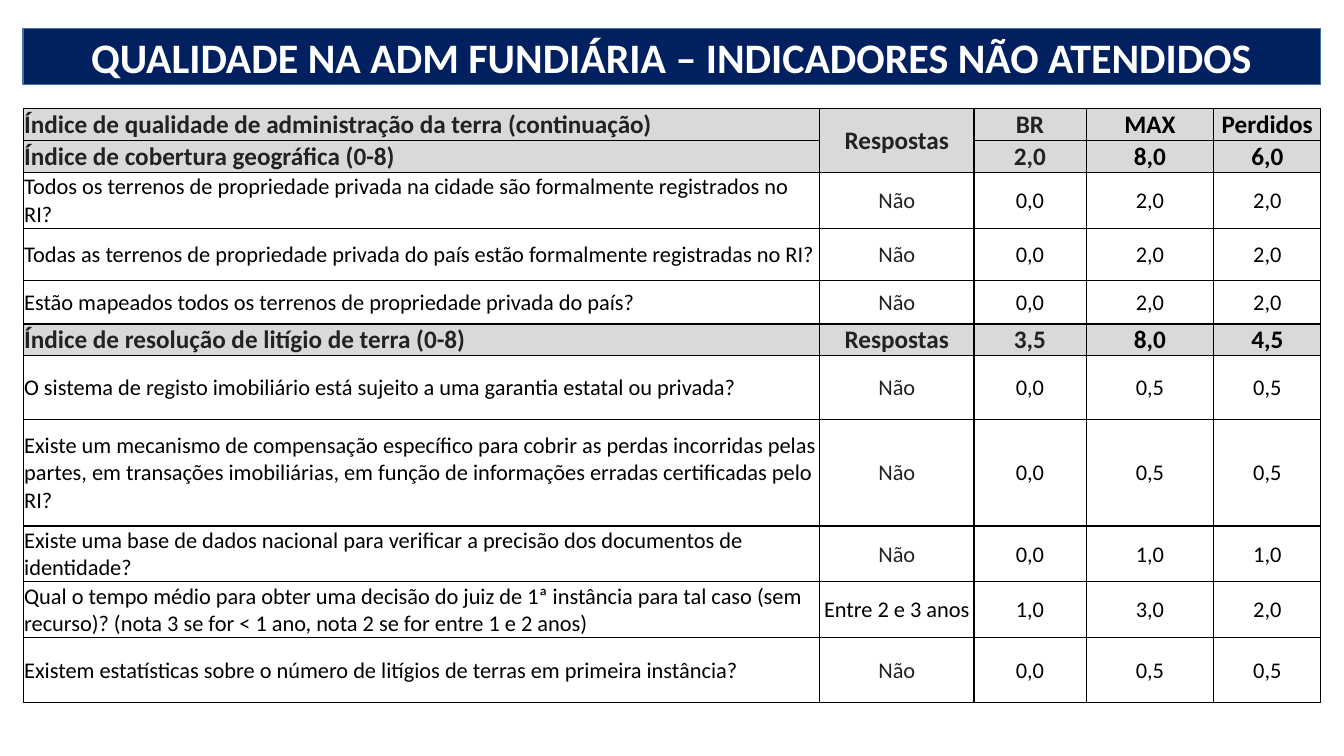
from lxml.etree import SubElement
from pptx import Presentation
from pptx.dml.color import RGBColor
from pptx.enum.text import MSO_ANCHOR as Anchor, MSO_AUTO_SIZE as AutoSize, PP_ALIGN as Align
from pptx.oxml import parse_xml
from pptx.oxml.ns import nsdecls, qn
from pptx.util import Inches, Pt

NAVY = RGBColor(0x00, 0x20, 0x60)
STEEL = RGBColor(0x43, 0x73, 0x9E)
WHITE = RGBColor(0xFF, 0xFF, 0xFF)
GRAY = RGBColor(0xD9, 0xD9, 0xD9)
CHARCOAL = RGBColor(0x22, 0x22, 0x22)
BLACK = RGBColor(0x00, 0x00, 0x00)

FONT = "Calibri"
LEFT, WIDTH = 0.23, 12.87
THICK, THIN = 1, 0.5

COLUMN_WIDTHS = [7.9, 1.53, 1.11, 1.27, 1.06]
ROW_HEIGHTS = [0.28, 0.28, 0.52, 0.52, 0.43, 0.28, 0.63, 1.06, 0.54, 0.52, 0.64]
HEADING_ROWS = {0, 1, 5}
THIN_BELOW_ROWS = {2, 3, 6, 9}
SCORE_COLUMN, MAX_COLUMN = 2, 3

ROWS = [
    ("Índice de qualidade de administração da terra (continuação)",
     "Respostas", "BR", "MAX", "Perdidos"),
    ("Índice de cobertura geográfica (0-8)", "", "2,0", "8,0", "6,0"),
    ("Todos os terrenos de propriedade privada na cidade são formalmente registrados no RI?",
     "Não", "0,0", "2,0", "2,0"),
    ("Todas as terrenos de propriedade privada do país estão formalmente registradas no RI?",
     "Não", "0,0", "2,0", "2,0"),
    ("Estão mapeados todos os terrenos de propriedade privada do país?",
     "Não", "0,0", "2,0", "2,0"),
    ("Índice de resolução de litígio de terra (0-8)", "Respostas", "3,5", "8,0", "4,5"),
    ("O sistema de registo imobiliário está sujeito a uma garantia estatal ou privada?",
     "Não", "0,0", "0,5", "0,5"),
    ("Existe um mecanismo de compensação específico para cobrir as perdas incorridas pelas "
     "partes, em transações imobiliárias, em função de informações erradas certificadas pelo RI?",
     "Não", "0,0", "0,5", "0,5"),
    ("Existe uma base de dados nacional para verificar a precisão dos documentos de identidade?",
     "Não", "0,0", "1,0", "1,0"),
    ("Qual o tempo médio para obter uma decisão do juiz de 1ª instância para tal caso "
     "(sem recurso)? (nota 3 se for < 1 ano, nota 2 se for entre 1 e 2 anos)",
     "Entre 2 e 3 anos", "1,0", "3,0", "2,0"),
    ("Existem estatísticas sobre o número de litígios de terras em primeira instância?",
     "Não", "0,0", "0,5", "0,5"),
]


def set_all(target, values):
    for name, value in values.items():
        setattr(target, name, value)


def write_text(text_frame, text, size, color, bold, alignment):
    paragraph = text_frame.paragraphs[0]
    paragraph.alignment = alignment
    run = paragraph.add_run()
    run.text = text
    set_all(run.font, {"name": FONT, "size": Pt(size), "bold": bold})
    run.font.color.rgb = color


def format_title(title, text):
    """Turn the title placeholder into a rounded banner."""
    set_all(title, {"left": Inches(LEFT), "top": Inches(0.28),
                    "width": Inches(WIDTH), "height": Inches(0.56)})
    title.element.spPr.append(parse_xml(
        f'<a:prstGeom {nsdecls("a")} prst="roundRect"><a:avLst/></a:prstGeom>'))
    title.fill.solid()
    title.fill.fore_color.rgb = NAVY
    title.line.color.rgb = STEEL
    title.line.width = Pt(1)
    set_all(title.text_frame, {"auto_size": AutoSize.NONE, "word_wrap": True,
                               "vertical_anchor": Anchor.MIDDLE})
    write_text(title.text_frame, text, 30, WHITE, True, Align.CENTER)


def set_borders(cell, row, column):
    """Draw thick rules, with thin ones inside a group and between BR and MAX."""
    widths = {
        "a:lnL": THIN if column == MAX_COLUMN else THICK,
        "a:lnR": THIN if column == SCORE_COLUMN else THICK,
        "a:lnT": THIN if row - 1 in THIN_BELOW_ROWS else THICK,
        "a:lnB": THIN if row in THIN_BELOW_ROWS else THICK,
    }
    properties = cell._tc.get_or_add_tcPr()
    for tag, width in widths.items():
        line = SubElement(properties, qn(tag), w=str(Pt(width)))
        fill = SubElement(line, qn("a:solidFill"))
        SubElement(fill, qn("a:srgbClr"), val=str(BLACK))


def format_cell(cell, row, column, text):
    heading = row in HEADING_ROWS
    top_anchored = column == SCORE_COLUMN and row < 2
    set_all(cell, {"margin_left": Inches(0.01), "margin_right": Inches(0.01),
                   "margin_top": Inches(0.01), "margin_bottom": 0,
                   "vertical_anchor": Anchor.TOP if top_anchored else Anchor.MIDDLE})
    set_borders(cell, row, column)
    if not heading and column >= MAX_COLUMN:
        cell.fill.background()
    else:
        cell.fill.solid()
        cell.fill.fore_color.rgb = GRAY if heading else WHITE
    if text:
        dark_gray = column < MAX_COLUMN if heading else text == "Não"
        write_text(cell.text_frame, text, 18 if heading else 16,
                   CHARCOAL if dark_gray else BLACK, heading,
                   Align.CENTER if column else Align.LEFT)


def add_indicator_table(slide):
    frame = slide.shapes.add_table(len(ROWS), len(COLUMN_WIDTHS), Inches(LEFT), Inches(1.08),
                                   Inches(WIDTH), Inches(sum(ROW_HEIGHTS)))
    table = frame.table
    set_all(table, {"first_row": False, "horz_banding": False})
    for column, width in zip(table.columns, COLUMN_WIDTHS):
        column.width = Inches(width)
    for row, height in zip(table.rows, ROW_HEIGHTS):
        row.height = Inches(height)
    for row, texts in enumerate(ROWS):
        for column, text in enumerate(texts):
            format_cell(table.cell(row, column), row, column, text)
    table.cell(0, 1).merge(table.cell(1, 1))


def main():
    presentation = Presentation()
    set_all(presentation, {"slide_width": Inches(13.33), "slide_height": Inches(7.5)})
    slide = presentation.slides.add_slide(presentation.slide_layouts[5])
    format_title(slide.shapes.title, "QUALIDADE NA ADM FUNDIÁRIA – INDICADORES NÃO ATENDIDOS")
    add_indicator_table(slide)
    presentation.save("out.pptx")


if __name__ == "__main__":
    main()
